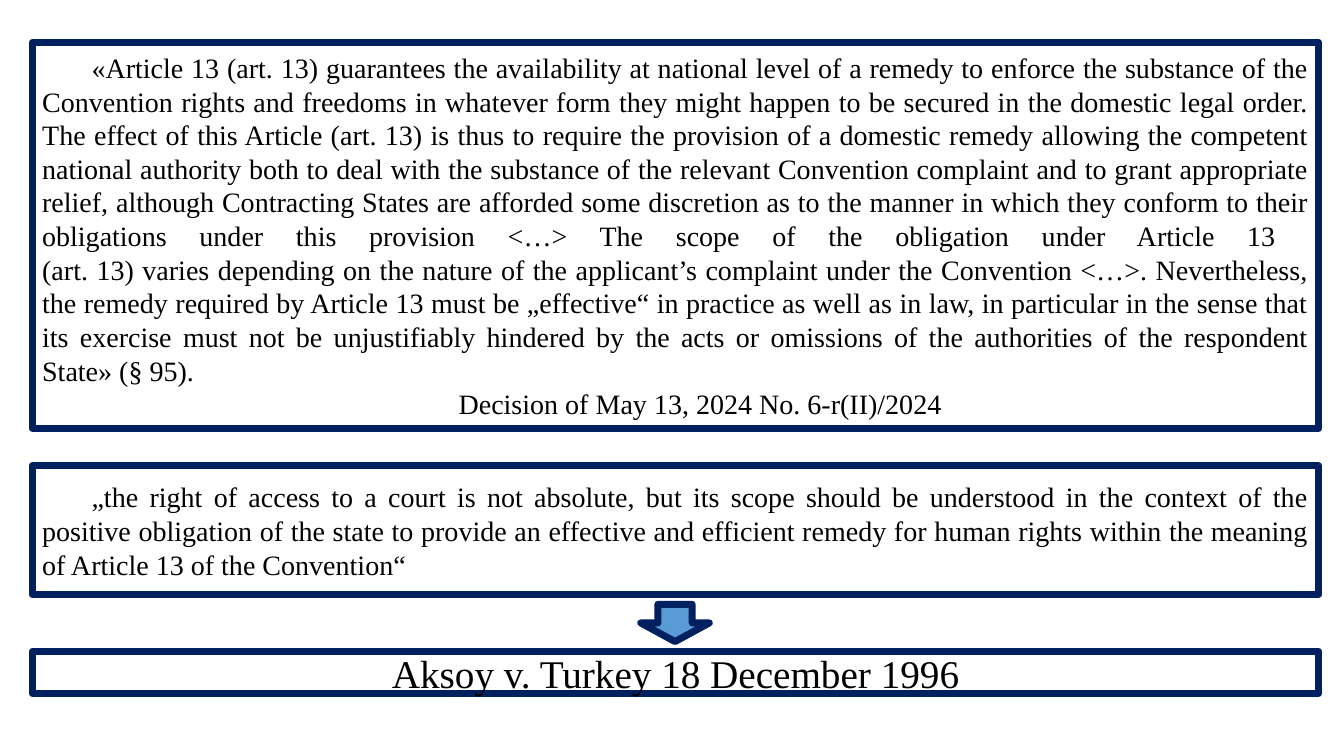
from pptx import Presentation
from pptx.dml.color import RGBColor
from pptx.enum.shapes import MSO_SHAPE
from pptx.enum.text import MSO_ANCHOR, PP_ALIGN
from pptx.util import Inches, Pt

NAVY, BLUE, WHITE, BLACK = "002060", "5B9BD5", "FFFFFF", "000000"
BOX_LEFT, BOX_WIDTH = 0.32, 12.76
FIRST_LINE_INDENT = 0.49


def color(hex_string):
    return RGBColor.from_string(hex_string)


def add_outlined_shape(kind, left, top, width, height, fill):
    shape = slide.shapes.add_shape(
        kind, Inches(left), Inches(top), Inches(width), Inches(height))
    shape.shadow.inherit = False
    shape.fill.solid()
    shape.fill.fore_color.rgb = color(fill)
    shape.line.color.rgb = color(NAVY)
    shape.line.width = Pt(5)
    return shape


presentation = Presentation()
presentation.slide_width = Inches(13.33)
presentation.slide_height = Inches(7.5)
slide = presentation.slides.add_slide(presentation.slide_layouts[6])

# Wording: each item is a part of the text before or after a line break
article_parts = [
    "«Article 13 (art. 13) guarantees the availability at national level of a remedy "
    "to enforce the substance of the Convention rights and freedoms in whatever form "
    "they might happen to be secured in the domestic legal order. The effect of this "
    "Article (art. 13) is thus to require the provision of a domestic remedy allowing "
    "the competent national authority both to deal with the substance of the relevant "
    "Convention complaint and to grant appropriate relief, although Contracting States "
    "are afforded some discretion as to the manner in which they conform to their "
    "obligations under this provision <…> The scope of the obligation under Article 13 ",
    "(art. 13) varies depending on the nature of the applicant’s complaint under the "
    "Convention <…>. Nevertheless, the remedy required by Article 13 must be "
    "„effective“ in practice as well as in law, in particular in the sense that its "
    "exercise must not be unjustifiably hindered by the acts or omissions of the "
    "authorities of the respondent State» (§ 95).",
]
access_text = (
    "„the right of access to a court is not absolute, but its scope should be "
    "understood in the context of the positive obligation of the state to provide an "
    "effective and efficient remedy for human rights within the meaning of Article 13 "
    "of the Convention“")

# Boxes: top, height, font size, paragraphs as (text, alignment, indent)
boxes = [
    (0.42, 3.83, 20, [
        ("\n".join(article_parts), PP_ALIGN.JUSTIFY, FIRST_LINE_INDENT),
        ("Decision of May 13, 2024 No. 6-r(II)/2024", PP_ALIGN.CENTER,
         FIRST_LINE_INDENT)]),
    (4.62, 1.28, 20, [(access_text, PP_ALIGN.JUSTIFY, FIRST_LINE_INDENT)]),
    (6.46, 0.42, 28, [("Aksoy v. Turkey 18 December 1996", PP_ALIGN.CENTER, 0)]),
]
for top, height, size, paragraphs in boxes:
    box = add_outlined_shape(
        MSO_SHAPE.RECTANGLE, BOX_LEFT, top, BOX_WIDTH, height, WHITE)
    frame = box.text_frame
    frame.word_wrap = True
    frame.vertical_anchor = MSO_ANCHOR.MIDDLE
    for index, (text, alignment, indent) in enumerate(paragraphs):
        paragraph = frame.add_paragraph() if index else frame.paragraphs[0]
        paragraph.text = text
        paragraph.alignment = alignment
        if indent:
            properties = paragraph._p.get_or_add_pPr()
            properties.set("marL", "0")
            properties.set("indent", str(Inches(indent)))
        for run in paragraph.runs:
            for name, value in {"name": "Times New Roman", "size": Pt(size)}.items():
                setattr(run.font, name, value)
            run.font.color.rgb = color(BLACK)

# Arrow turned to point down at the case name
arrow = add_outlined_shape(MSO_SHAPE.LEFT_ARROW, 6.51, 5.84, 0.37, 0.68, BLUE)
arrow.rotation = 270

presentation.save("out.pptx")
